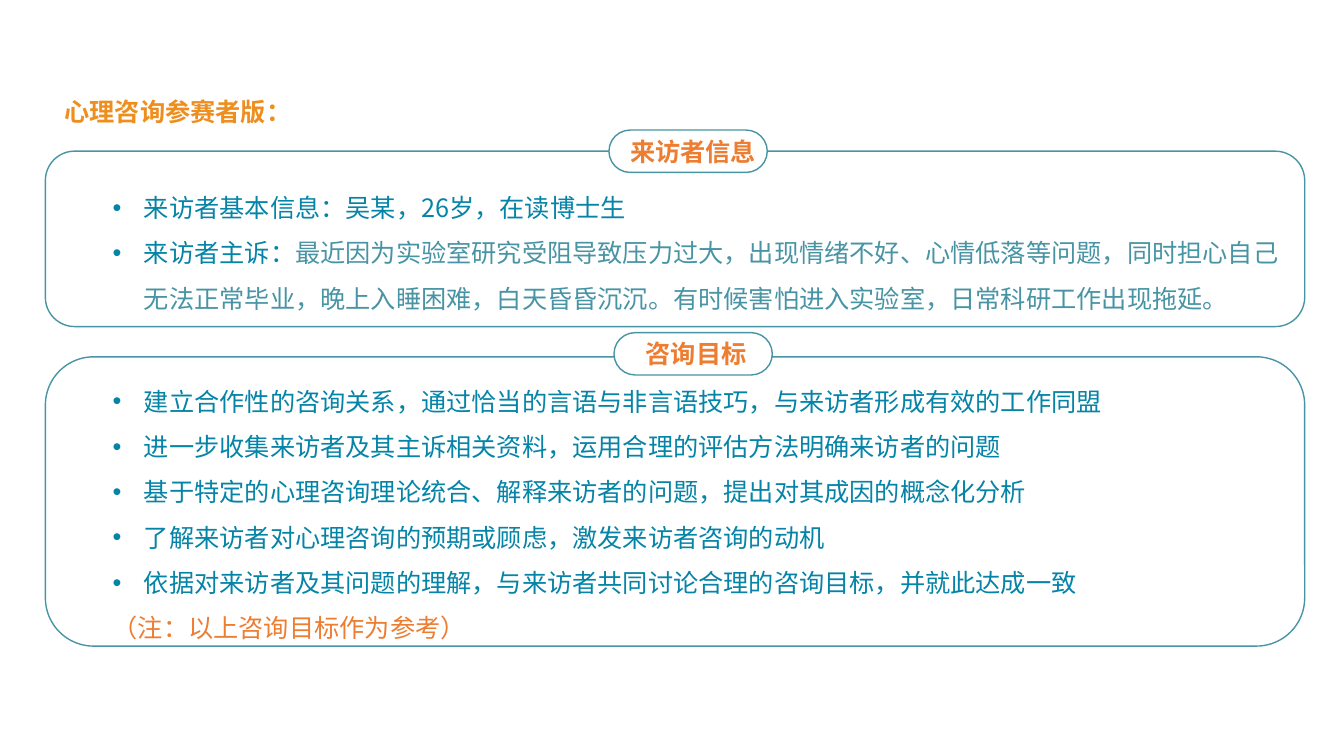
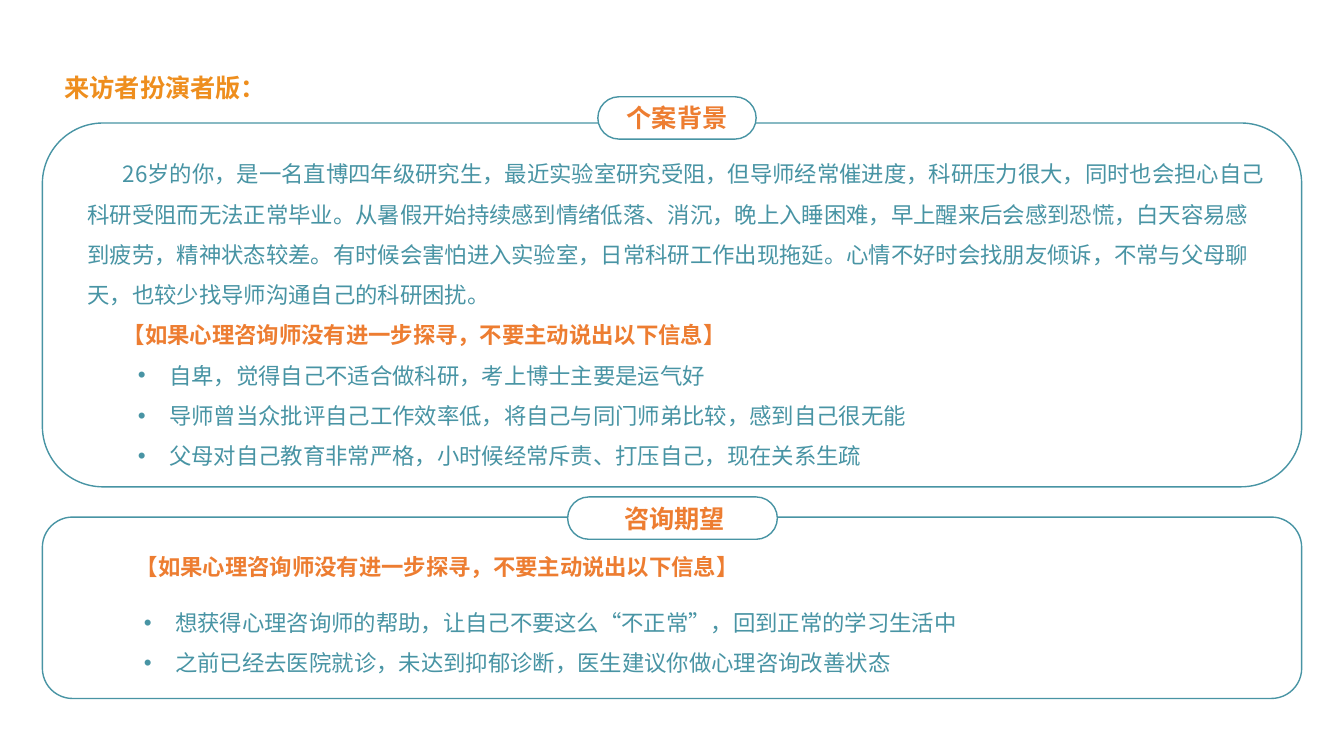
"""Build two counselling case slides: the counsellor's version and the client actor's version."""
from dataclasses import dataclass

from lxml.etree import SubElement
from pptx import Presentation
from pptx.dml.color import RGBColor
from pptx.enum.shapes import MSO_SHAPE
from pptx.enum.text import MSO_ANCHOR, MSO_AUTO_SIZE, PP_ALIGN
from pptx.oxml.ns import qn
from pptx.util import Inches, Pt

FONT = "Noto Sans CJK SC"
WHITE = RGBColor(0xFF, 0xFF, 0xFF)
TEAL = RGBColor(0x48, 0x94, 0xA4)
BLUE = RGBColor(0x05, 0x84, 0xA7)
ORANGE = RGBColor(0xED, 0x7D, 0x31)
AMBER = RGBColor(0xEE, 0x8E, 0x1E)

PANEL_WIDTH = 12.49
BADGE_HEIGHT = 0.42
HANGING = 0.31
FIRST_LINE = 0.35
HEADING_SIZE = 18
WARNING = "【如果心理咨询师没有进一步探寻，不要主动说出以下信息】"


@dataclass(frozen=True)
class Span:
    """A stretch of text in one style."""
    text: str
    color: RGBColor = TEAL
    bold: bool = False


@dataclass(frozen=True)
class Para:
    """A paragraph with its indents in inches."""
    spans: tuple[Span, ...]
    margin: float = 0
    indent: float = 0
    bullet: bool = False
    spacing: float = 1.5


@dataclass(frozen=True)
class Badge:
    """A pill-shaped label; the shift moves its text to the right."""
    text: str
    left: float
    top: float
    width: float = 1.57
    shift: float = 0


@dataclass(frozen=True)
class Body:
    """A block of paragraphs placed in a panel."""
    box: tuple[float, float, float, float]
    size: int
    paras: tuple[Para, ...]


@dataclass(frozen=True)
class Panel:
    """A rounded frame with its badge and text."""
    top: float
    height: float
    badge: Badge
    bodies: tuple[Body, ...]


@dataclass(frozen=True)
class Page:
    """One slide: heading, frame position and panels."""
    heading: str
    heading_top: float
    heading_width: float
    panel_left: float
    panels: tuple[Panel, ...]


def bullet(*spans: Span, level: float = 0) -> Para:
    """Return a bulleted paragraph with a hanging indent."""
    return Para(spans, level + HANGING, -HANGING, True)


PAGES = (
    Page("心理咨询参赛者版：", 0.91, 2.99, 0.45, (
        Panel(1.5, 1.74, Badge("来访者信息", 6.04, 1.29, shift=0.05), (
            Body((1.02, 1.71, 11.87, 1.41), 18, (
                bullet(Span("来访者基本信息：吴某，26岁，在读博士生", BLUE)),
                bullet(
                    Span("来访者主诉：", BLUE),
                    Span("最近因为实验室研究受阻导致压力过大，出现情绪不好、心情低落等问题，"
                         "同时担心自己无法正常毕业，晚上入睡困难，白天昏昏沉沉。"
                         "有时候害怕进入实验室，日常科研工作出现拖延。")),
            )),
        )),
        Panel(3.54, 2.87, Badge("咨询目标", 6.09, 3.3, shift=0.03), (
            Body((1.02, 3.63, 10.73, 2.77), 18, (
                *(bullet(Span(goal, BLUE)) for goal in (
                    "建立合作性的咨询关系，通过恰当的言语与非言语技巧，与来访者形成有效的工作同盟",
                    "进一步收集来访者及其主诉相关资料，运用合理的评估方法明确来访者的问题",
                    "基于特定的心理咨询理论统合、解释来访者的问题，提出对其成因的概念化分析",
                    "了解来访者对心理咨询的预期或顾虑，激发来访者咨询的动机",
                    "依据对来访者及其问题的理解，与来访者共同讨论合理的咨询目标，并就此达成一致",
                )),
                Para((Span("（注：以上咨询目标作为参考）", ORANGE),)),
            )),
        )),
    )),
    Page("来访者扮演者版：", 0.67, 2.2, 0.42, (
        Panel(1.22, 3.61, Badge("个案背景", 5.93, 0.96), (
            Body((0.77, 1.41, 11.91, 3.33), 16, (
                Para((Span(
                    "26岁的你，是一名直博四年级研究生，最近实验室研究受阻，但导师经常催进度，"
                    "科研压力很大，同时也会担心自己科研受阻而无法正常毕业。"
                    "从暑假开始持续感到情绪低落、消沉，晚上入睡困难，早上醒来后会感到恐慌，"
                    "白天容易感到疲劳，精神状态较差。有时候会害怕进入实验室，"
                    "日常科研工作出现拖延。心情不好时会找朋友倾诉，不常与父母聊天，"
                    "也较少找导师沟通自己的科研困扰。"),), indent=FIRST_LINE),
                Para((Span(WARNING, ORANGE, True),), indent=FIRST_LINE),
                *(bullet(Span(secret), level=0.5) for secret in (
                    "自卑，觉得自己不适合做科研，考上博士主要是运气好",
                    "导师曾当众批评自己工作效率低，将自己与同门师弟比较，感到自己很无能",
                    "父母对自己教育非常严格，小时候经常斥责、打压自己，现在关系生疏",
                )),
            )),
        )),
        Panel(5.13, 1.8, Badge("咨询期望", 5.63, 4.93, 2.08, 0.02), (
            Body((1.25, 5.44, 6.5, 0.37), 16, (
                Para((Span(WARNING, ORANGE, True),), spacing=1),
            )),
            Body((1.33, 5.86, 9.93, 0.86), 16, (
                bullet(Span("想获得心理咨询师的帮助，让自己不要这么“不正常”，回到正常的学习生活中")),
                bullet(Span("之前已经去医院就诊，未达到抑郁诊断，医生建议你做心理咨询改善状态")),
            )),
        )),
    )),
)


def apply(target, values: dict) -> None:
    """Set each named attribute on the target."""
    for name, value in values.items():
        setattr(target, name, value)


def add_span(paragraph, span: Span, size: int) -> None:
    """Append a styled run to a paragraph."""
    run = paragraph.add_run()
    run.text = span.text
    apply(run.font, {"name": FONT, "size": Pt(size), "bold": span.bold})
    run.font.color.rgb = span.color
    properties = run.font._element
    properties.set("lang", "zh-CN")
    SubElement(properties, qn("a:ea"), typeface=FONT)


def write_label(shape, span: Span, align: PP_ALIGN, anchor: MSO_ANCHOR) -> None:
    """Write a one-line heading into a shape."""
    frame = shape.text_frame
    apply(frame, {"word_wrap": True, "auto_size": MSO_AUTO_SIZE.NONE, "vertical_anchor": anchor})
    line = frame.paragraphs[0]
    line.alignment = align
    add_span(line, span, HEADING_SIZE)


def add_frame(slide, left: float, top: float, width: float, height: float):
    """Draw a rounded teal outline and return it."""
    frame = slide.shapes.add_shape(
        MSO_SHAPE.ROUNDED_RECTANGLE, *map(Inches, (left, top, width, height)))
    frame.shadow.inherit = False
    frame.fill.background()
    frame.line.color.rgb = TEAL
    frame.line.width = Pt(1)
    return frame


def add_badge(slide, badge: Badge) -> None:
    """Draw a white pill with its orange label."""
    pill = add_frame(slide, badge.left, badge.top, badge.width, BADGE_HEIGHT)
    pill.adjustments[0] = 0.5
    pill.fill.solid()
    pill.fill.fore_color.rgb = WHITE
    apply(pill.text_frame, {
        "margin_left": Inches(2 * badge.shift), "margin_right": 0,
        "margin_top": 0, "margin_bottom": 0})
    write_label(pill, Span(badge.text, ORANGE, True), PP_ALIGN.CENTER, MSO_ANCHOR.MIDDLE)


def add_body(slide, body: Body) -> None:
    """Draw a text block with its indents and bullets."""
    frame = slide.shapes.add_textbox(*map(Inches, body.box)).text_frame
    apply(frame, {"word_wrap": True, "auto_size": MSO_AUTO_SIZE.SHAPE_TO_FIT_TEXT})
    for index, para in enumerate(body.paras):
        paragraph = frame.add_paragraph() if index else frame.paragraphs[0]
        paragraph.line_spacing = para.spacing
        properties = paragraph._p.get_or_add_pPr()
        properties.set("marL", str(Inches(para.margin)))
        properties.set("indent", str(Inches(para.indent)))
        if para.bullet:
            SubElement(properties, qn("a:buFont"), typeface="Arial")
            SubElement(properties, qn("a:buChar"), char="•")
        for span in para.spans:
            add_span(paragraph, span, body.size)


def add_page(deck, page: Page) -> None:
    """Add one slide with its heading and panels."""
    slide = deck.slides.add_slide(deck.slide_layouts[5])
    heading = slide.shapes.title
    apply(heading, {
        "left": Inches(0.54), "top": Inches(page.heading_top),
        "width": Inches(page.heading_width), "height": Inches(0.4)})
    write_label(heading, Span(page.heading, AMBER, True), PP_ALIGN.LEFT, MSO_ANCHOR.TOP)
    for panel in page.panels:
        add_frame(slide, page.panel_left, panel.top, PANEL_WIDTH, panel.height)
        add_badge(slide, panel.badge)
        for body in panel.bodies:
            add_body(slide, body)


def main() -> None:
    """Build and save the deck."""
    deck = Presentation()
    apply(deck, {"slide_width": Inches(13.33), "slide_height": Inches(7.5)})
    for page in PAGES:
        add_page(deck, page)
    deck.save("out.pptx")


if __name__ == "__main__":
    main()
